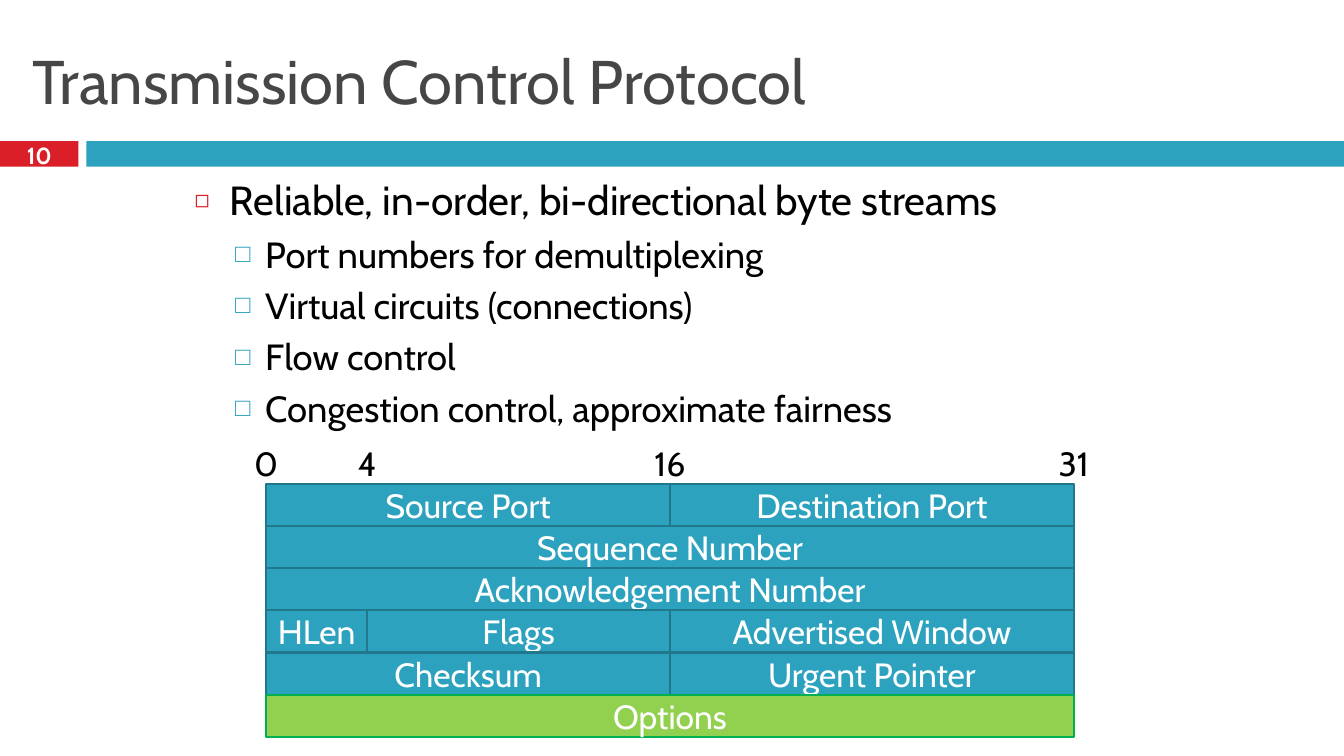
from lxml import etree
from pptx import Presentation
from pptx.dml.color import RGBColor
from pptx.enum.shapes import MSO_SHAPE
from pptx.enum.text import MSO_ANCHOR, MSO_AUTO_SIZE, PP_ALIGN
from pptx.oxml.ns import qn
from pptx.util import Cm, Pt

RECTANGLE = MSO_SHAPE.RECTANGLE
MIDDLE, TOP = MSO_ANCHOR.MIDDLE, MSO_ANCHOR.TOP
LEFT, CENTER = PP_ALIGN.LEFT, PP_ALIGN.CENTER
NO_FIT = MSO_AUTO_SIZE.NONE

TEAL, DARK_TEAL, RED = "2DA2BF", "21788D", "DA1F28"
GREEN, DARK_GREEN = "92D050", "00B050"
WHITE, BLACK, GRAY = "FFFFFF", "000000", "464646"

TITLE_FORMAT = {"size": Pt(44), "name": "Cabin", "bold": False}
NUMBER_FORMAT = {"size": Pt(16.6), "name": "Cabin", "bold": True}
FIELD_FORMAT = {"size": Pt(24), "name": "Cabin", "bold": False}

# Per list level: bullet, its colour and percent size, margin and hang in cm,
# space before and text size in points
LEVELS = [
    ("◻", RED, 60, 0.89, 0.89, 7, 29),
    ("□", TEAL, 70, 1.78, 0.76, 5.5, 26),
]
POINTS = [
    (0, "Reliable, in-order, bi-directional byte streams"),
    (1, "Port numbers for demultiplexing"),
    (1, "Virtual circuits (connections)"),
    (1, "Flow control"),
    (1, "Congestion control, approximate fairness"),
]

WORD_BITS = 32
BIT_LABELS = [(0, "0"), (4, "4"), (16, "16"), (32, "31")]
HEADER_ROWS = [
    [("Source Port", 16), ("Destination Port", 16)],
    [("Sequence Number", 32)],
    [("Acknowledgement Number", 32)],
    [("HLen", 4), ("Flags", 12), ("Advertised Window", 16)],
    [("Checksum", 16), ("Urgent Pointer", 16)],
    [("Options", 32)],
]


def color(value):
    return RGBColor.from_string(value)


def place(shape, box):
    for name, length in zip(("left", "top", "width", "height"), box):
        setattr(shape, name, Cm(length))


def write(para, text, font_format, text_color, align):
    para.alignment = align
    span = para.add_run()
    span.text = text
    for name, value in font_format.items():
        setattr(span.font, name, value)
    span.font.color.rgb = color(text_color)


def set_frame(shape, anchor, wrap=True):
    frame = shape.text_frame
    frame.auto_size = NO_FIT
    frame.word_wrap = wrap
    frame.vertical_anchor = anchor
    return frame


def add_rectangle(page, box, fill, line=None):
    shape = page.shapes.add_shape(RECTANGLE, *map(Cm, box))
    shape.shadow.inherit = False
    shape.fill.solid()
    shape.fill.fore_color.rgb = color(fill)
    if line:
        shape.line.color.rgb = color(line)
        shape.line.width = Pt(1.5)
    else:
        shape.line.fill.background()
    return shape


def add_label(page, box, text, font_format, text_color):
    label = page.shapes.add_textbox(*map(Cm, box))
    frame = set_frame(label, MIDDLE, wrap=False)
    write(frame.paragraphs[0], text, font_format, text_color, CENTER)


def set_bullet(para, character, bullet_color, percent, margin, hang):
    properties = para._p.get_or_add_pPr()
    properties.set("marL", str(Cm(margin)))
    properties.set("indent", str(-Cm(hang)))
    holder = etree.SubElement(properties, qn("a:buClr"))
    etree.SubElement(holder, qn("a:srgbClr"), val=bullet_color)
    etree.SubElement(properties, qn("a:buSzPct"), val=str(percent * 1000))
    etree.SubElement(properties, qn("a:buChar"), char=character)


def fill_title(page, box, text):
    title = page.shapes.title
    place(title, box)
    frame = set_frame(title, MIDDLE)
    write(frame.paragraphs[0], text, TITLE_FORMAT, GRAY, LEFT)


def add_band(page, box, number):
    """Draw the red page number tab and the teal bar to its right."""
    left, top, width, height = box
    tab, gap = 1.98, 0.2
    add_rectangle(page, (left, top, tab, height), RED)
    bar = left + tab + gap
    add_rectangle(page, (bar, top, width - tab - gap, height), TEAL)
    add_label(page, (left, top - 0.08, tab, 0.84), number, NUMBER_FORMAT, WHITE)


def fill_list(page, box):
    body = page.placeholders[1]
    place(body, box)
    frame = set_frame(body, TOP)
    for index, (level, text) in enumerate(POINTS):
        para = frame.add_paragraph() if index else frame.paragraphs[0]
        *bullet, space, size = LEVELS[level]
        para.level = level
        para.space_before = Pt(space)
        set_bullet(para, *bullet)
        write(para, text, {"size": Pt(size), "name": "Cabin"}, BLACK, LEFT)


def add_header_diagram(page, box):
    """Draw the segment header: bit labels above, one row per 32-bit word."""
    left, top, width, height = box
    bit = width / WORD_BITS
    row_height = height / len(HEADER_ROWS)
    for row, fields in enumerate(HEADER_ROWS):
        start = 0
        for text, bits in fields:
            fill, line = (GREEN, DARK_GREEN) if text == "Options" else (TEAL, DARK_TEAL)
            cell = (left + start * bit, top + row * row_height, bits * bit, row_height)
            field = add_rectangle(page, cell, fill, line)
            frame = set_frame(field, MIDDLE)
            write(frame.paragraphs[0], text, FIELD_FORMAT, WHITE, CENTER)
            start += bits
    label_width, label_height = 1.65, 1.68
    for position, text in BIT_LABELS:
        label = (left + position * bit - label_width / 2, top - 1.37, label_width, label_height)
        add_label(page, label, text, FIELD_FORMAT, BLACK)


def main():
    deck = Presentation()
    deck.slide_width, deck.slide_height = Cm(33.87), Cm(19.05)
    page = deck.slides.add_slide(deck.slide_layouts[1])
    fill_title(page, (0.56, 0.64, 32.74, 2.74), "Transmission Control Protocol")
    add_band(page, (0, 3.56, 33.87, 0.64), "10")
    fill_list(page, (4.65, 4.29, 24.56, 6.93))
    add_header_diagram(page, (6.71, 12.19, 20.35, 6.38))
    deck.save("out.pptx")


if __name__ == "__main__":
    main()
